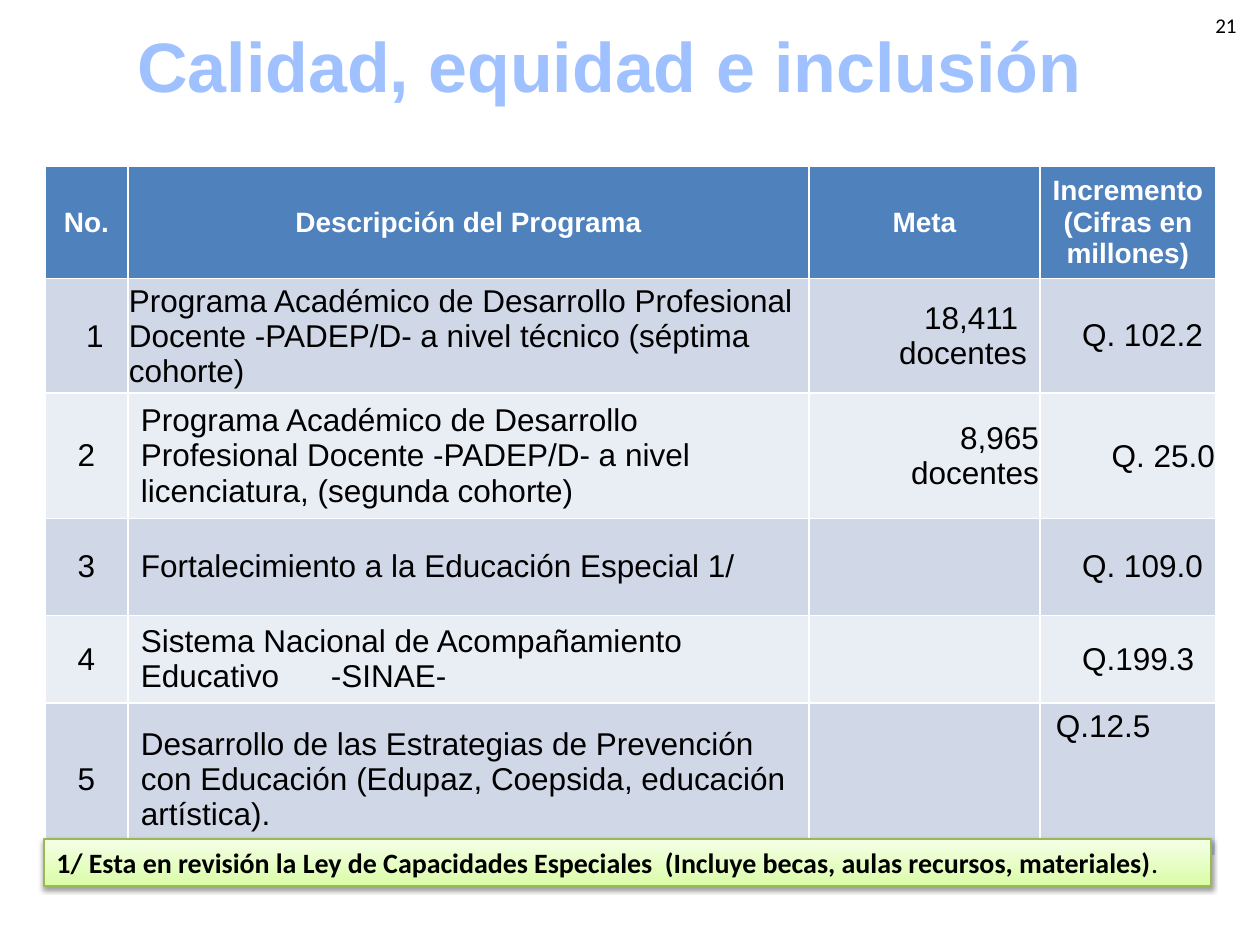
from lxml.etree import SubElement as Sub
from pptx import Presentation
from pptx.dml.color import RGBColor as RGB
from pptx.enum.shapes import MSO_SHAPE as Shape
from pptx.enum.text import MSO_ANCHOR as Anchor, PP_ALIGN as Align
from pptx.oxml.ns import qn
from pptx.util import Pt

PX = 914400 // 126
BLACK = RGB(0, 0, 0)
WHITE = RGB(255, 255, 255)
SKY = RGB(0xA0, 0xC1, 0xFF)
HEAD = RGB(0x4F, 0x81, 0xBD)
DARK = RGB(0xD0, 0xD8, 0xE8)
PALE = RGB(0xE9, 0xED, 0xF4)
LIME = RGB(0xDA, 0xFD, 0xA7)
MINT = RGB(0xF5, 0xFF, 0xE7)
EDGE = RGB(0x98, 0xB9, 0x55)


def style(frame, size, color, name, bold=False, align=Align.LEFT):
    for para in frame.paragraphs:
        para.alignment = align
        for run in para.runs:
            font = run.font
            font.size, font.name, font.bold = Pt(size), name, bold
            font.color.rgb = color


deck = Presentation()
deck.slide_width, deck.slide_height = 1260 * PX, 945 * PX
slide = deck.slides.add_slide(deck.slide_layouts[6])
shapes = slide.shapes

title = shapes.add_textbox(25 * PX, 16 * PX, 1169 * PX, 624 * PX).text_frame
title.word_wrap = True
title.margin_top = 6 * PX
title.text = "Calidad, equidad e inclusión"
style(title, 40, SKY, "Arial", True, Align.CENTER)

rows = [
    ("No.", "Descripción del Programa", "Meta", "Incremento (Cifras en millones)"),
    ("1", "Programa Académico de Desarrollo Profesional Docente -PADEP/D- a nivel técnico (séptima cohorte)",
     "18,411 \ndocentes", "Q. 102.2"),
    ("2", "Programa Académico de Desarrollo Profesional Docente -PADEP/D- a nivel licenciatura, (segunda cohorte)",
     "8,965 docentes", "Q. 25.0"),
    ("3", "Fortalecimiento a la Educación Especial 1/", "", "Q. 109.0"),
    ("4", "Sistema Nacional de Acompañamiento Educativo\t-SINAE-", "", "Q.199.3 "),
    ("5", "Desarrollo de las Estrategias de Prevención con Educación (Edupaz, Coepsida, educación artística).",
     "", "Q.12.5"),
]
widths = [83, 681, 231, 176]
heights = [106, 106, 119, 97, 83, 153]
aligns = [Align.CENTER, Align.LEFT, Align.RIGHT, Align.RIGHT]
insets = {(0, 3): (11, 6, 11, 6), (1, 0): (18, 1, 1, 0), (1, 1): (1, 1, 1, 0),
          (2, 2): (64, 1, 1, 0), (2, 3): (64, 1, 1, 0), (5, 3): (16, 6, 13, 6)}

table = shapes.add_table(6, 4, 45 * PX, 166 * PX, sum(widths) * PX, sum(heights) * PX).table
for col, width in zip(table.columns, widths):
    col.width = width * PX
for r, texts in enumerate(rows):
    table.rows[r].height = heights[r] * PX
    for c, text in enumerate(texts):
        cell = table.cell(r, c)
        cell.fill.solid()
        cell.fill.fore_color.rgb = HEAD if r == 0 else DARK if r % 2 else PALE
        cell.vertical_anchor = Anchor.MIDDLE
        left, top, right, low = insets.get((r, c), (13, 6, 13, 6))
        cell.margin_left, cell.margin_right = left * PX, right * PX
        cell.margin_top, cell.margin_bottom = top * PX, low * PX
        cell.text_frame.text = text
        if r == 0:
            style(cell.text_frame, 16, WHITE, "Arial", True, Align.CENTER)
        else:
            style(cell.text_frame, 18, BLACK, "Arial", False, aligns[c])

last = table.cell(5, 3)
last.vertical_anchor = Anchor.TOP
last.text_frame.paragraphs[0].alignment = Align.LEFT
props = table.cell(4, 1).text_frame.paragraphs[0]._p.get_or_add_pPr()
Sub(Sub(props, qn("a:tabLst")), qn("a:tab"), pos=str(190 * PX), algn="l")

page = shapes.add_textbox(955 * PX, 0, 294 * PX, 50 * PX).text_frame
page.word_wrap = True
page.vertical_anchor = Anchor.MIDDLE
page.text = "21"
style(page, 12, BLACK, "Calibri", False, Align.RIGHT)

note = shapes.add_shape(Shape.RECTANGLE, 44 * PX, 839 * PX, 1167 * PX, 47 * PX)
note.fill.gradient()
note.fill.gradient_angle = 90
for stop, color, place in zip(note.fill.gradient_stops, (LIME, MINT), (0, 1)):
    stop.color.rgb = color
    stop.position = place
note.line.color.rgb = EDGE
note.line.width = Pt(0.75)
note.shadow.inherit = False
glow = Sub(note._element.spPr.find(qn("a:effectLst")), qn("a:outerShdw"),
           blurRad="40000", dist="20000", dir="5400000", rotWithShape="0")
Sub(Sub(glow, qn("a:srgbClr"), val=str(BLACK)), qn("a:alpha"), val="38000")
frame = note.text_frame
frame.word_wrap = True
frame.vertical_anchor = Anchor.TOP
frame.text = "1/ Esta en revisión la Ley de Capacidades Especiales  (Incluye becas, aulas recursos, materiales)"
dot = frame.paragraphs[0].add_run()
dot.text = "."
style(frame, 16, BLACK, "Calibri", True)
dot.font.bold = False

deck.save("out.pptx")
